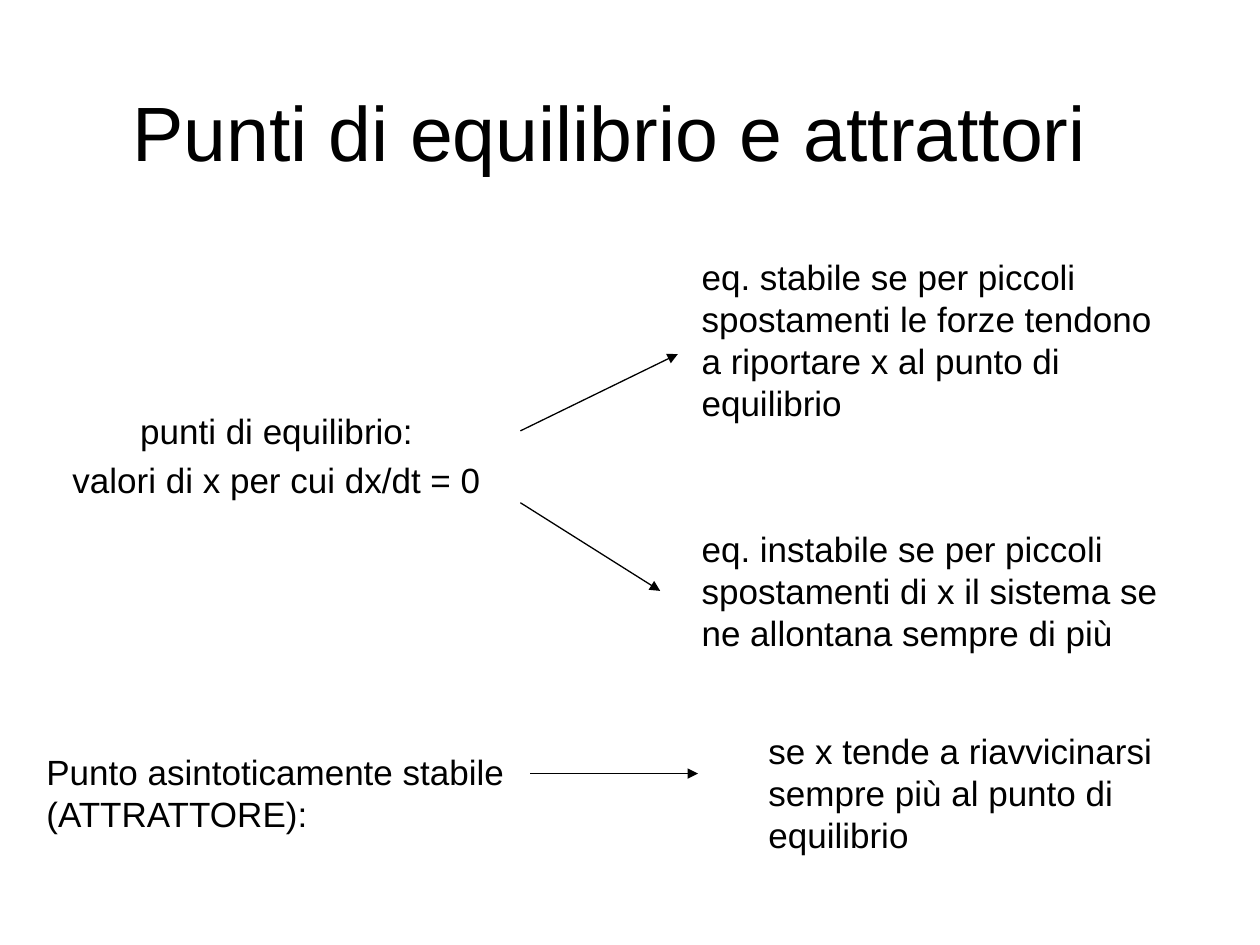
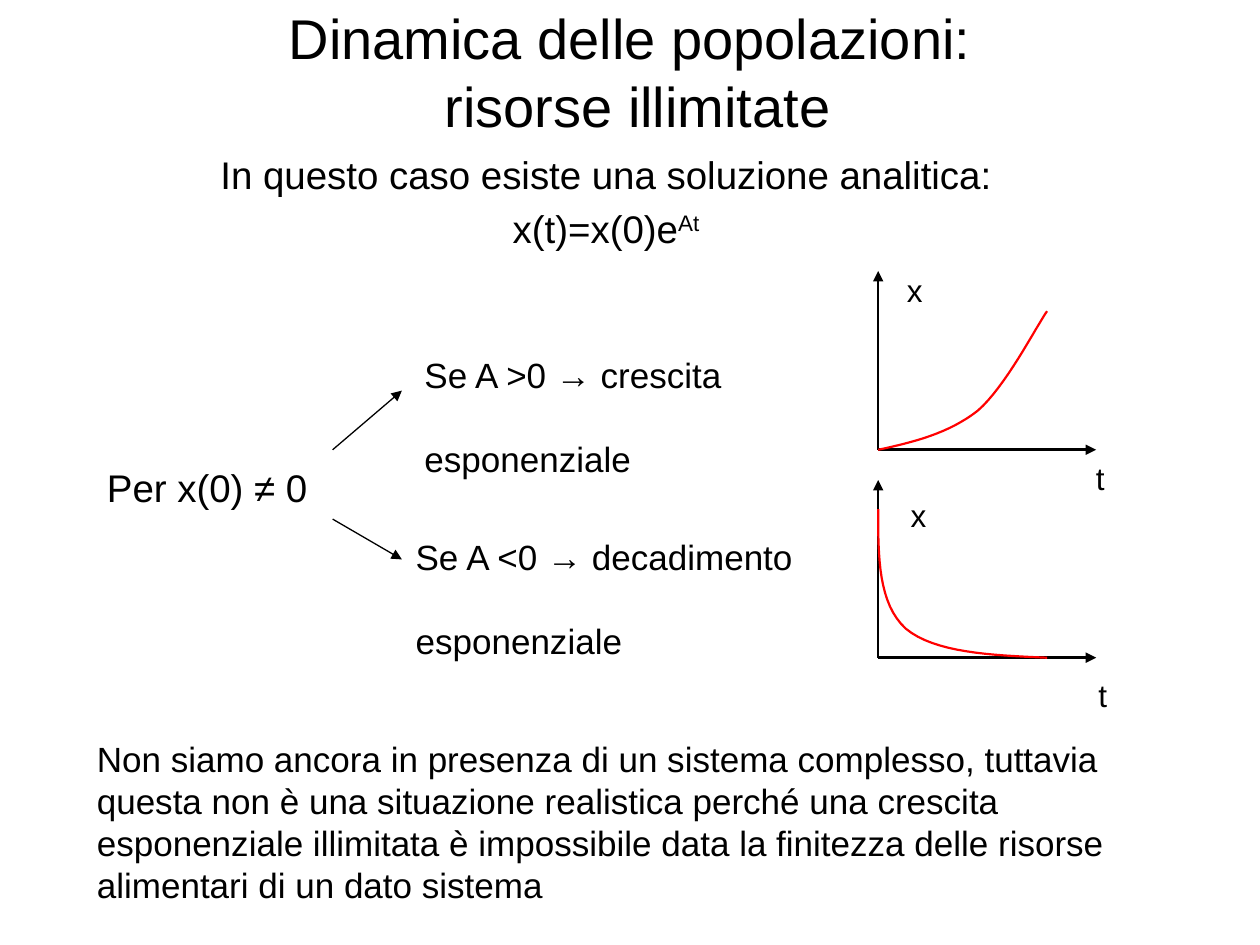
from dataclasses import dataclass
from typing import NamedTuple

import lxml.etree
import pptx
import pptx.dml.color
import pptx.enum.shapes
import pptx.enum.text
import pptx.oxml.ns
import pptx.util

Inches = pptx.util.Inches
Pt = pptx.util.Pt
ALIGN = pptx.enum.text.PP_ALIGN
Point = tuple[float, float]


@dataclass(frozen=True)
class Theme:
    font: str = "Arial"
    ink: str = "000000"
    curve: str = "FF0000"
    title: int = 44
    long_title: int = 32
    lead: int = 22
    body: int = 20
    axis_label: int = 18
    arrow_width: float = 0.75
    axis_width: float = 1.5
    curve_width: float = 1.25


THEME = Theme()


class Box(NamedTuple):
    left: float
    top: float
    width: float
    height: float


@dataclass(frozen=True)
class Note:
    """A text block; each line is one paragraph, text after ^ is raised."""
    box: Box
    lines: tuple[str, ...]
    size: int = THEME.body
    centred: bool = False
    wrap: bool = True
    gap: float = 0  # points before each paragraph
    skip: float = 0  # points before the second and later paragraphs


@dataclass(frozen=True)
class Graph:
    """Axes from an origin, with a curve of joined cubic Bézier segments."""
    origin: Point
    axis_top: float
    curve: tuple[Point, ...]
    x_label: Box
    t_label: Box


AXIS_END = 8.7
CURVE_STEPS = 16


def add_run(paragraph, text: str, size: int, raised: bool = False) -> None:
    run = paragraph.add_run()
    run.text = text
    run.font.name = THEME.font
    run.font.size = Pt(size)
    run.font.color.rgb = pptx.dml.color.RGBColor.from_string(THEME.ink)
    if raised:
        run._r.get_or_add_rPr().set("baseline", "30000")


def add_titled_slide(deck, box: Box, lines: tuple[str, ...], size: int):
    slide = deck.slides.add_slide(deck.slide_layouts[5])
    title = slide.shapes.title
    title.left, title.top, title.width, title.height = map(Inches, box)
    frame = title.text_frame
    frame.auto_size = pptx.enum.text.MSO_AUTO_SIZE.NONE
    frame.vertical_anchor = pptx.enum.text.MSO_ANCHOR.MIDDLE
    paragraph = frame.paragraphs[0]
    paragraph.alignment = ALIGN.CENTER
    for index, line in enumerate(lines):
        if index:
            paragraph.add_line_break()
        add_run(paragraph, line, size)
    return slide


def add_note(shapes, note: Note) -> None:
    frame = shapes.add_textbox(*map(Inches, note.box)).text_frame
    frame.word_wrap = note.wrap
    for index, line in enumerate(note.lines):
        paragraph = frame.add_paragraph() if index else frame.paragraphs[0]
        paragraph.alignment = ALIGN.CENTER if note.centred else ALIGN.LEFT
        paragraph.space_before = Pt(note.gap + (note.skip if index else 0))
        base, _, power = line.partition("^")
        add_run(paragraph, base, note.size)
        if power:
            add_run(paragraph, power, note.size, raised=True)


def style_line(line, color: str, width: float) -> None:
    line.color.rgb = pptx.dml.color.RGBColor.from_string(color)
    line.width = Pt(width)


def add_arrow(shapes, start: Point, end: Point, width: float = THEME.arrow_width) -> None:
    arrow = shapes.add_connector(
        pptx.enum.shapes.MSO_CONNECTOR.STRAIGHT, *map(Inches, (*start, *end)))
    style_line(arrow.line, THEME.ink, width)
    qn = pptx.oxml.ns.qn
    lxml.etree.SubElement(arrow.line._get_or_add_ln(), qn("a:tailEnd"), type="triangle")
    lxml.etree.SubElement(arrow._element.spPr, qn("a:effectLst"))


def curve_points(controls: tuple[Point, ...]) -> list[Point]:
    points = [controls[0]]
    for first in range(0, len(controls) - 1, 3):
        segment = controls[first:first + 4]
        for step in range(1, CURVE_STEPS + 1):
            t = step / CURVE_STEPS
            weights = ((1 - t) ** 3, 3 * t * (1 - t) ** 2, 3 * t * t * (1 - t), t ** 3)
            points.append((sum(w * p[0] for w, p in zip(weights, segment)),
                           sum(w * p[1] for w, p in zip(weights, segment))))
    return points


def add_graph(slide, graph: Graph) -> None:
    shapes = slide.shapes.add_group_shape().shapes
    x, y = graph.origin
    for end in ((x, graph.axis_top), (AXIS_END, y)):
        add_arrow(shapes, graph.origin, end, THEME.axis_width)
    points = [(Inches(px), Inches(py)) for px, py in curve_points(graph.curve)]
    builder = shapes.build_freeform(*points[0])
    builder.add_line_segments(points[1:], close=False)
    curve = builder.convert_to_shape()
    curve.shadow.inherit = False
    curve.fill.background()
    style_line(curve.line, THEME.curve, THEME.curve_width)
    for label, box in (("x", graph.x_label), ("t", graph.t_label)):
        add_note(shapes, Note(box, (label,), THEME.axis_label, wrap=False))


# Slide 1: equilibrium points
EQUILIBRIUM_NOTES = (
    Note(Box(0.25, 3.2, 3.89, 0.87),
         ("punti di equilibrio:", "valori di x per cui dx/dt = 0"), centred=True, gap=4),
    Note(Box(5.47, 1.98, 3.8, 1.45),
         ("eq. stabile se per piccoli spostamenti le forze tendono a riportare x "
          "al punto di equilibrio",)),
    Note(Box(5.47, 4.14, 4.1, 1.11),
         ("eq. instabile se per piccoli spostamenti di x il sistema se ne allontana "
          "sempre di più",)),
    Note(Box(0.27, 5.91, 3.86, 0.77),
         ("Punto asintoticamente stabile", "(ATTRATTORE):"), wrap=False),
    Note(Box(6, 5.74, 3.57, 1.11),
         ("se x tende a riavvicinarsi sempre più al punto di equilibrio",)),
)
EQUILIBRIUM_ARROWS = (
    ((4.13, 3.42), (5.38, 2.81)),
    ((4.13, 3.99), (5.24, 4.69)),
    ((4.21, 6.14), (5.54, 6.14)),
)

# Slide 2: population dynamics
POPULATION_NOTES = (
    Note(Box(0.76, 1.15, 8.1, 1.26),
         ("In questo caso esiste una soluzione analitica:", "x(t)=x(0)e^At"),
         THEME.lead, centred=True, gap=4.4),
    Note(Box(0.75, 3.63, 1.81, 0.47), ("Per x(0) ≠ 0",), THEME.lead, wrap=False),
    Note(Box(3.27, 2.76, 3.22, 1.11), ("Se A >0 → crescita", "esponenziale"), skip=24),
    Note(Box(3.2, 4.2, 3.45, 1.11), ("Se A <0 → decadimento", "esponenziale"), skip=24),
    Note(Box(0.67, 5.8, 8.21, 1.45),
         ("Non siamo ancora in presenza di un sistema complesso, tuttavia questa non è "
          "una situazione realistica perché una crescita esponenziale illimitata è "
          "impossibile data la finitezza delle risorse alimentari di un dato sistema",)),
)
POPULATION_ARROWS = (
    ((2.64, 3.57), (3.19, 3.1)),
    ((2.64, 4.12), (3.19, 4.44)),
)
GROWTH = Graph(
    (6.97, 3.57), 2.15,
    ((6.97, 3.57), (7.25, 3.51), (7.53, 3.44), (7.76, 3.26),
     (7.98, 3.07), (8.22, 2.6), (8.31, 2.47)),
    Box(7.1, 2.1, 0.33, 0.4), Box(8.6, 3.59, 0.27, 0.4))
DECAY = Graph(
    (6.97, 5.22), 3.81,
    ((6.97, 4.04), (6.97, 4.42), (6.97, 4.79), (7.19, 4.99),
     (7.42, 5.18), (7.86, 5.2), (8.31, 5.22)),
    Box(7.13, 3.89, 0.33, 0.4), Box(8.62, 5.32, 0.27, 0.4))


def fill_slide(slide, notes: tuple[Note, ...], arrows: tuple) -> None:
    for note in notes:
        add_note(slide.shapes, note)
    for start, end in arrows:
        add_arrow(slide.shapes, start, end)


def main() -> None:
    deck = pptx.Presentation()
    deck.slide_width, deck.slide_height = Inches(10), Inches(7.5)

    equilibrium = add_titled_slide(
        deck, Box(0.59, 0.6, 8.5, 0.87), ("Punti di equilibrio e attrattori",), THEME.title)
    fill_slide(equilibrium, EQUILIBRIUM_NOTES, EQUILIBRIUM_ARROWS)

    population = add_titled_slide(
        deck, Box(0.75, 0.13, 8.5, 0.87),
        ("Dinamica delle popolazioni:", " risorse illimitate"), THEME.long_title)
    fill_slide(population, POPULATION_NOTES, POPULATION_ARROWS)
    for graph in (GROWTH, DECAY):
        add_graph(population, graph)

    deck.save("out.pptx")


if __name__ == "__main__":
    main()
